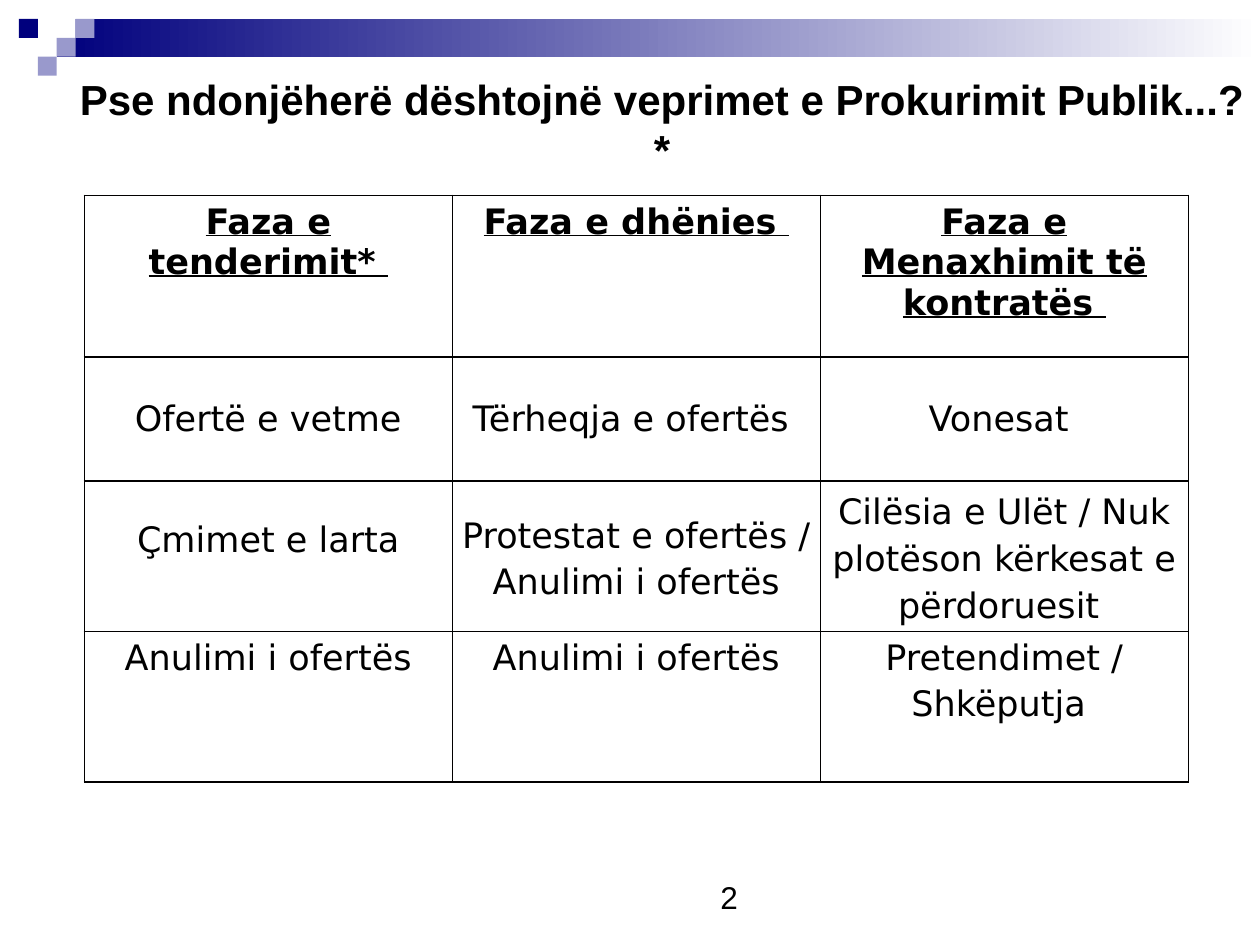
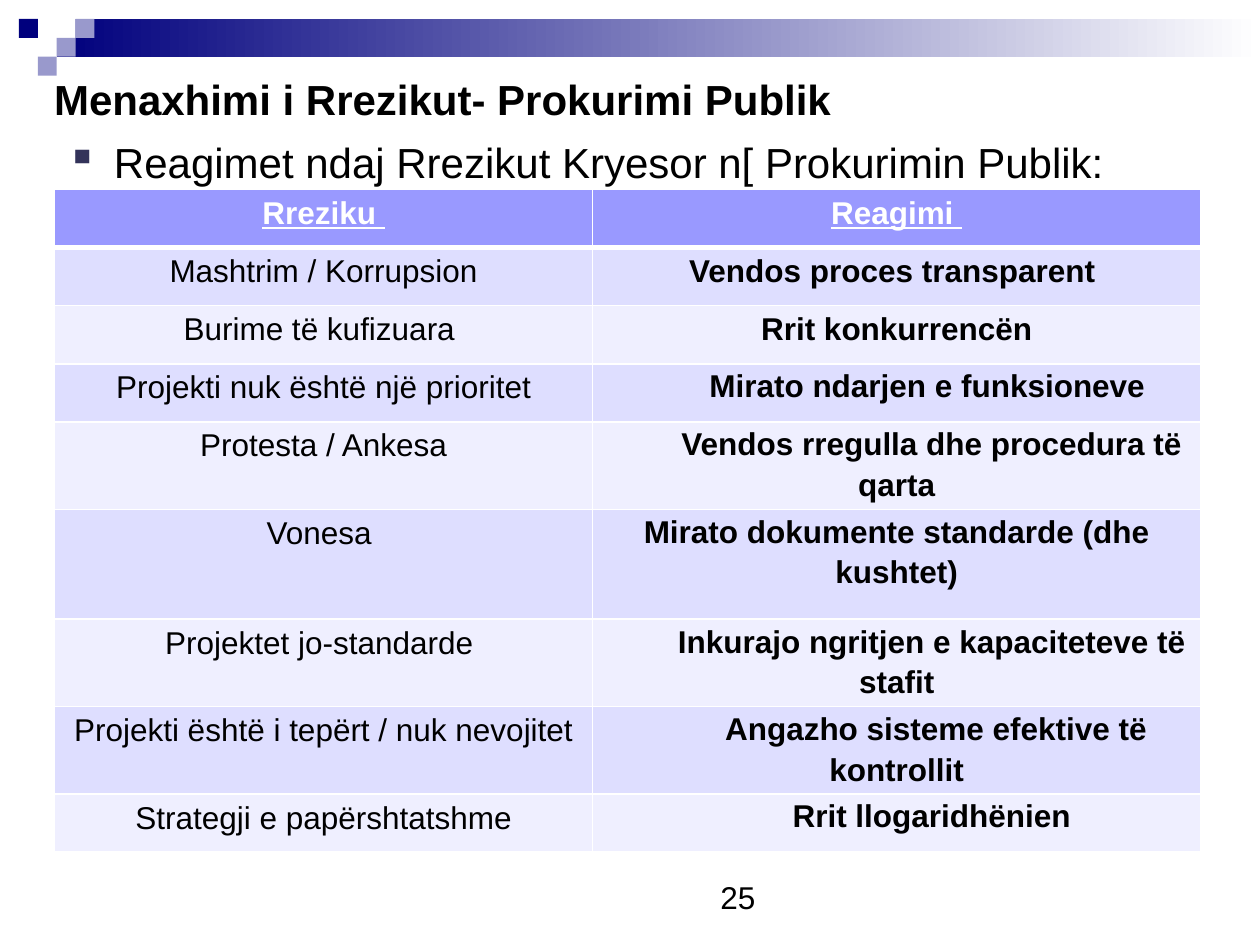
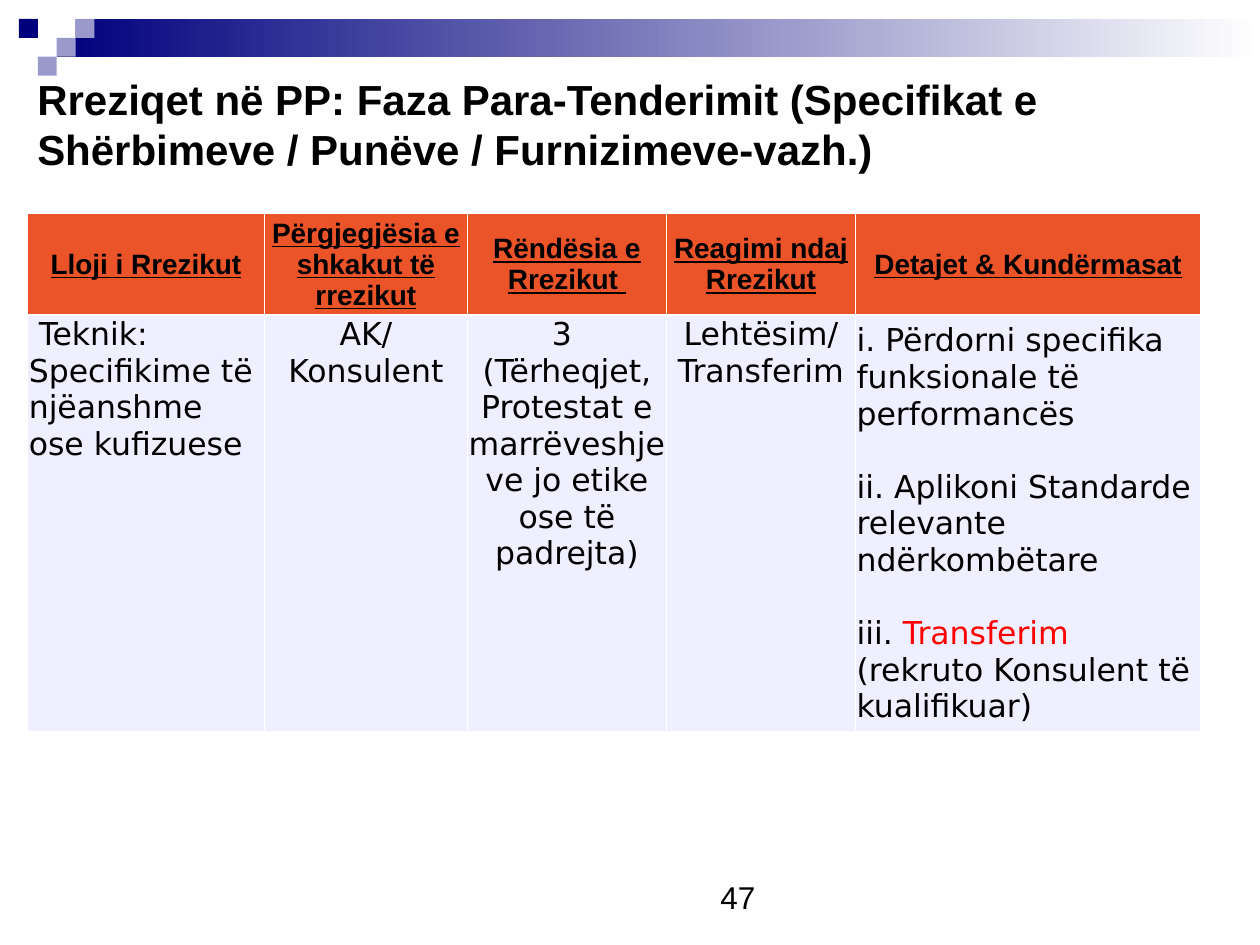
import pptx
import pptx.dml.color
import pptx.enum.shapes
import pptx.enum.text
import pptx.oxml
import pptx.oxml.ns
import pptx.util
from dataclasses import dataclass, replace

Pt = pptx.util.Pt
ALIGN = pptx.enum.text.PP_ALIGN
ANCHOR = pptx.enum.text.MSO_ANCHOR
LEFT, CENTER = ALIGN.LEFT, ALIGN.CENTER
TOP, MIDDLE = ANCHOR.TOP, ANCHOR.MIDDLE


@dataclass(frozen=True)
class Theme:
    black: str = "000000"
    white: str = "FFFFFF"
    navy: str = "00007D"
    lilac: str = "9999CC"
    bullet: str = "33335A"
    grid: str = "010000"
    head: str = "9999FF"
    band_dark: str = "DEDEFF"
    band_light: str = "EFEFFF"
    orange: str = "EB5329"
    red: str = "FF0000"
    sans: str = "Arial"
    wide: str = "DejaVu Sans"
    title: float = 24
    large: float = 20
    body: float = 18
    small: float = 16


THEME = Theme()


@dataclass(frozen=True)
class TextStyle:
    size: float = THEME.body
    font: str = THEME.sans
    color: str = THEME.black
    bold: bool = False
    underline: bool = False
    align: int = LEFT
    spacing: float = 1
    gap: float = 0      # space between paragraphs
    indent: float = 0   # first line


@dataclass(frozen=True)
class CellStyle:
    text: TextStyle
    fill: str = ""
    anchor: int = TOP
    insets: tuple = (7.2, 3.6, 7.2, 3.6)   # left, top, right, bottom
    border: str = THEME.white
    bottom_width: float = 1


def rgb(value):
    return pptx.dml.color.RGBColor.from_string(value)


class Deck:
    def __init__(self, theme):
        self.theme = theme
        self.presentation = pptx.Presentation()
        self.presentation.slide_width = Pt(720)
        self.presentation.slide_height = Pt(540)
        self.slide = None

    def new_slide(self, number):
        self.slide = self.presentation.slides.add_slide(self.presentation.slide_layouts[6])
        self.band()
        self.text(404.6, 498.2, 46, 29, str(number), TextStyle())

    def rect(self, left, top, width, height, color):
        shape = self.slide.shapes.add_shape(
            pptx.enum.shapes.MSO_SHAPE.RECTANGLE, Pt(left), Pt(top), Pt(width), Pt(height))
        shape.shadow.inherit = False
        shape.line.fill.background()
        shape.fill.solid()
        shape.fill.fore_color.rgb = rgb(color)
        return shape

    def band(self):
        """Gradient bar with the stepped squares at its left end."""
        unit = 10.8
        bar = self.rect(3 * unit, unit, 720 - 3 * unit, 2 * unit, self.theme.navy)
        bar.fill.gradient()
        bar.fill.gradient_angle = 0
        for stop, position, color in zip(bar.fill.gradient_stops, (0, 1),
                                         (self.theme.navy, self.theme.white)):
            stop.position = position
            stop.color.rgb = rgb(color)
        for column, row, color in ((3, 1, self.theme.white), (4, 1, self.theme.lilac),
                                   (1, 1, self.theme.navy), (3, 2, self.theme.lilac),
                                   (2, 3, self.theme.lilac)):
            self.rect(column * unit, row * unit, unit, unit, color)

    def fill_text(self, frame, content, style):
        """Content is a string, or a list of paragraphs that are strings or (text, color) runs."""
        for index, runs in enumerate([content] if isinstance(content, str) else content):
            paragraph = frame.paragraphs[0] if index == 0 else frame.add_paragraph()
            paragraph.alignment = style.align
            if style.spacing != 1:
                paragraph.line_spacing = style.spacing
            if index and style.gap:
                paragraph.space_before = Pt(style.gap)
            if style.indent and index == 0:
                paragraph._p.get_or_add_pPr().set("indent", str(int(Pt(style.indent))))
            for words, color in [(runs, style.color)] if isinstance(runs, str) else runs:
                run = paragraph.add_run()
                run.text = words
                run.font.name = style.font
                run.font.size = Pt(style.size)
                run.font.bold = style.bold
                run.font.underline = style.underline
                run.font.color.rgb = rgb(color)

    def text(self, left, top, width, height, content, style):
        box = self.slide.shapes.add_textbox(Pt(left), Pt(top), Pt(width), Pt(height))
        box.text_frame.word_wrap = True
        self.fill_text(box.text_frame, content, style)
        return box

    def title(self, left, width, content, align=LEFT):
        self.text(left, 38.2, width, 65.5, content,
                  TextStyle(self.theme.title, bold=True, align=align))

    def bullet(self, left, top, width, height, content):
        box = self.text(left, top, width, height, content,
                        TextStyle(self.theme.title, spacing=1.5))
        properties = box.text_frame.paragraphs[0]._p.get_or_add_pPr()
        properties.set("marL", str(int(Pt(27))))
        properties.set("indent", str(int(Pt(-27))))
        namespace = pptx.oxml.ns.nsdecls("a")
        for xml in (f'<a:buClr {namespace}><a:srgbClr val="{self.theme.bullet}"/></a:buClr>',
                    f'<a:buChar {namespace} char="▪"/>'):
            properties.append(pptx.oxml.parse_xml(xml))

    def cell(self, cell, content, style):
        properties = cell._tc.get_or_add_tcPr()
        for side in "LRTB":
            width = Pt(style.bottom_width if side == "B" else 1)
            properties.append(pptx.oxml.parse_xml(
                f'<a:ln{side} {pptx.oxml.ns.nsdecls("a")} w="{int(width)}"><a:solidFill>'
                f'<a:srgbClr val="{style.border}"/></a:solidFill></a:ln{side}>'))
        if style.fill:
            cell.fill.solid()
            cell.fill.fore_color.rgb = rgb(style.fill)
        else:
            cell.fill.background()
        cell.vertical_anchor = style.anchor
        (cell.margin_left, cell.margin_top,
         cell.margin_right, cell.margin_bottom) = map(Pt, style.insets)
        self.fill_text(cell.text_frame, content, style.text)

    def table(self, left, top, widths, heights, rows):
        """Rows hold (content, CellStyle) pairs."""
        table = self.slide.shapes.add_table(
            len(heights), len(widths), Pt(left), Pt(top),
            Pt(sum(widths)), Pt(sum(heights))).table
        table.first_row = table.horz_banding = False
        for column, width in zip(table.columns, widths):
            column.width = Pt(width)
        for row, height, entries in zip(table.rows, heights, rows):
            row.height = Pt(height)
            for cell, (content, style) in zip(row.cells, entries):
                self.cell(cell, content, style)


def failure_slide(deck):
    theme = deck.theme
    deck.new_slide(2)
    plain = TextStyle(theme.large, theme.wide, align=CENTER)
    loose = replace(plain, spacing=1.15)
    phase = CellStyle(replace(plain, bold=True, underline=True), border=theme.grid)
    single = CellStyle(plain, anchor=MIDDLE, insets=(5, 0, 5, 0), border=theme.grid)
    middle = replace(single, text=loose)
    raised = replace(middle, insets=(5, 0, 5, 22))
    last = replace(middle, anchor=TOP)
    deck.table(48.2, 111.6, [210.3] * 3, [92.5, 70.8, 86, 86], [
        [("Faza e tenderimit* ", phase), ("Faza e dhënies ", phase),
         ("Faza e Menaxhimit të kontratës ", phase)],
        [("Ofertë e vetme", single), ("Tërheqja e ofertës ", single), ("Vonesat ", single)],
        [("Çmimet e larta", raised), ("Protestat e ofertës / Anulimi i ofertës", middle),
         ("Cilësia e Ulët / Nuk plotëson kërkesat e përdoruesit ", middle)],
        [("Anulimi i ofertës", last), ("Anulimi i ofertës", last),
         ("Pretendimet / Shkëputja ", last)],
    ])
    deck.title(36.7, 683.3, "Pse ndonjëherë dështojnë veprimet e Prokurimit Publik...?*", CENTER)


def response_slide(deck):
    theme = deck.theme
    deck.new_slide(25)
    deck.title(23.8, 463, "Menaxhimi i Rrezikut- Prokurimi Publik")
    deck.bullet(31, 59.8, 663, 45.4, "Reagimet ndaj Rrezikut Kryesor n[ Prokurimin Publik:")
    plain = TextStyle(align=CENTER)
    strong = replace(plain, bold=True)
    head = CellStyle(replace(strong, color=theme.white, underline=True), theme.head,
                     bottom_width=3)
    roomy, tight = CellStyle(plain).insets, (0, 0, 0, 0)
    # risk, response, first-line indent, line spacing and insets of the response
    responses = [
        ("Mashtrim / Korrupsion", "Vendos proces transparent ", 0, 1, roomy),
        ("Burime të kufizuara ", "Rrit konkurrencën", 0, 1, roomy),
        ("Projekti nuk është një prioritet", "Mirato ndarjen e funksioneve ", 40, 1.15, tight),
        ("Protesta / Ankesa", "Vendos rregulla dhe procedura të qarta", 40, 1.15, tight),
        ("Vonesa ", "Mirato dokumente standarde (dhe kushtet)", 0, 1.15, tight),
        ("Projektet jo-standarde ", "Inkurajo ngritjen e kapaciteteve të stafit", 40, 1.15, tight),
        ("Projekti është i tepërt / nuk nevojitet", "Angazho sisteme efektive të kontrollit",
         45, 1.15, tight),
        ("Strategji e papërshtatshme", "Rrit llogaridhënien ", 45, 1.15, tight),
    ]
    rows = [[("Rreziku ", head), ("Reagimi ", head)]]
    for index, (risk, response, indent, spacing, insets) in enumerate(responses):
        fill = (theme.band_dark, theme.band_light)[index % 2]
        answer = replace(strong, indent=indent, spacing=spacing)
        rows.append([(risk, CellStyle(plain, fill)),
                     (response, CellStyle(answer, fill, insets=insets))])
    deck.table(31.2, 108.3, [307.4, 347.6],
               [33.2, 33.2, 33.2, 33.2, 50, 62.8, 50, 50, 33.2], rows)


def tender_slide(deck):
    theme = deck.theme
    deck.new_slide(47)
    deck.title(14.2, 705.8, "Rreziqet në PP: Faza Para-Tenderimit (Specifikat e "
                            "Shërbimeve / Punëve / Furnizimeve-vazh.)")
    insets = (0.7, 0.7, 0.7, 0)
    head = CellStyle(TextStyle(theme.small, bold=True, underline=True, align=CENTER),
                     theme.orange, MIDDLE, insets)
    body = TextStyle(font=theme.wide)
    kind = CellStyle(replace(body, indent=5.7), theme.band_light, insets=insets)
    centered = replace(kind, text=replace(body, align=CENTER))
    details = replace(kind, text=replace(body, gap=21), anchor=MIDDLE)
    headings = ["Lloji i Rrezikut", "Përgjegjësia e shkakut të rrezikut",
                "Rëndësia e Rrezikut ", "Reagimi ndaj Rrezikut", "Detajet & Kundërmasat"]
    deck.table(15.8, 121.8, [135.4, 115.9, 113.8, 108, 197.3], [58, 238], [
        [(heading, head) for heading in headings],
        [(["Teknik: Specifikime të", "njëanshme ose kufizuese"], kind),
         ("AK/ Konsulent", centered),
         (["3 ", "(Tërheqjet, Protestat e marrëveshjeve jo etike ose të padrejta)"], centered),
         ("Lehtësim/ Transferim", centered),
         (["i. Përdorni specifika funksionale të performancës",
           "ii. Aplikoni Standarde relevante ndërkombëtare",
           [("iii. ", theme.black), ("Transferim ", theme.red),
            ("(rekruto Konsulent të kualifikuar)", theme.black)]], details)],
    ])


def main():
    deck = Deck(THEME)
    failure_slide(deck)
    response_slide(deck)
    tender_slide(deck)
    deck.presentation.save("out.pptx")


if __name__ == "__main__":
    main()
